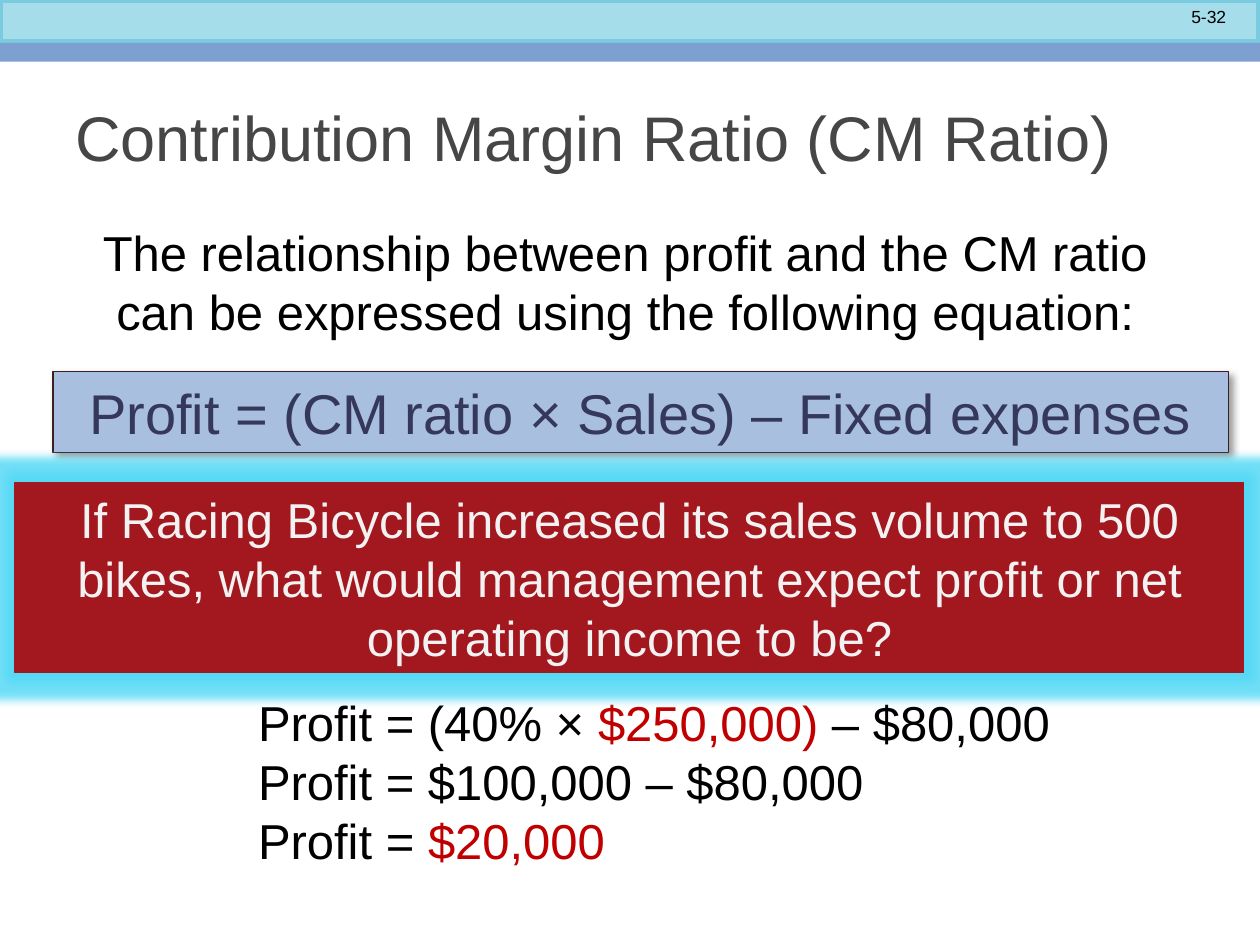
from dataclasses import dataclass

from lxml.etree import SubElement
from pptx import Presentation
from pptx.dml.color import RGBColor
from pptx.enum.shapes import MSO_SHAPE
from pptx.enum.text import MSO_ANCHOR, PP_ALIGN
from pptx.oxml.ns import qn
from pptx.util import Inches, Pt


@dataclass(frozen=True)
class Theme:
    """Colours, font and type sizes of the slide."""
    font: str = "Arial"
    black: str = "000000"
    white: str = "FFFFFF"
    title: str = "464646"
    header: str = "A6DDEA"
    header_line: str = "7ACBE0"
    stripe: str = "7DA0D0"
    equation: str = "A8BFDF"
    equation_line: str = "3E1E25"
    equation_text: str = "35385A"
    question: str = "A3171E"
    question_text: str = "F2F2F2"
    glow: str = "4FD8F5"
    accent: str = "C00000"
    number_size: int = 10
    body_size: int = 28
    equation_size: int = 32
    title_size: int = 36


THEME = Theme()


def add_box(slide, at, fill, line=None, width=0.75):
    """Add a flat rectangle with an optional outline."""
    sp = slide.shapes.add_shape(MSO_SHAPE.RECTANGLE, *map(Inches, at))
    sp.shadow.inherit = False
    sp.fill.solid()
    sp.fill.fore_color.rgb = RGBColor.from_string(fill)
    if line:
        sp.line.color.rgb = RGBColor.from_string(line)
        sp.line.width = Pt(width)
    else:
        sp.line.fill.background()
    return sp


def add_label(slide, at):
    """Add an empty text box."""
    return slide.shapes.add_textbox(*map(Inches, at))


def write(sp, paragraphs, size, align=PP_ALIGN.LEFT, anchor=MSO_ANCHOR.TOP):
    """Fill a shape with paragraphs, each a list of (text, colour) runs."""
    tf = sp.text_frame
    for name, value in {"word_wrap": True, "vertical_anchor": anchor}.items():
        setattr(tf, name, value)
    for i, runs in enumerate(paragraphs):
        p = tf.add_paragraph() if i else tf.paragraphs[0]
        p.alignment = align
        for text, color in runs:
            r = p.add_run()
            r.text = text
            r.font.color.rgb = RGBColor.from_string(color)
            for name, value in {"name": THEME.font, "size": Pt(size)}.items():
                setattr(r.font, name, value)


def add_effect(sp, kind, color, alpha, **attributes):
    """Put a glow or a shadow on a shape."""
    effects = sp._element.spPr.find(qn("a:effectLst"))
    effect = SubElement(effects, qn(f"a:{kind}"))
    for name, value in attributes.items():
        effect.set(name, str(value))
    clr = SubElement(effect, qn("a:srgbClr"), val=color)
    SubElement(clr, qn("a:alpha"), val=str(alpha * 1000))


def add_header(slide):
    """Draw the bands along the top and the slide number."""
    add_box(slide, (0, 0, 10, 0.34), THEME.header, THEME.header_line, 4)
    add_box(slide, (0, 0.34, 10, 0.15), THEME.stripe)
    write(add_label(slide, (8.5, 0, 1.33, 0.27)), [[("5-32", THEME.black)]],
          THEME.number_size, PP_ALIGN.RIGHT)


def add_intro(slide):
    """Write the title and the introducing sentence."""
    write(add_label(slide, (0.5, 0.5, 9, 1.17)),
          [[("Contribution Margin Ratio (CM Ratio)", THEME.title)]],
          THEME.title_size, anchor=MSO_ANCHOR.MIDDLE)
    write(add_label(slide, (0.5, 1.72, 8.92, 1.03)),
          [[("The relationship between profit and the CM ratio can be "
             "expressed using the following equation:", THEME.black)]],
          THEME.body_size, PP_ALIGN.CENTER)


def add_equation(slide):
    """Draw the shadowed profit equation."""
    sp = add_box(slide, (0.42, 2.95, 9.33, 0.64), THEME.equation, THEME.equation_line)
    add_effect(sp, "outerShdw", THEME.black, 40, blurRad=Pt(4), dist=Pt(3),
               dir=45 * 60000, algn="tl", rotWithShape=0)
    write(sp, [[("Profit = (CM ratio × Sales) – Fixed expenses", THEME.equation_text)]],
          THEME.equation_size, PP_ALIGN.CENTER, MSO_ANCHOR.MIDDLE)


def add_answer(slide):
    """Write the worked calculation."""
    sp = add_box(slide, (1.95, 5.45, 6.57, 1.99), THEME.white)
    write(sp, [
        [("Profit = (40% × ", THEME.black), ("$250,000) ", THEME.accent),
         ("– $80,000", THEME.black)],
        [("Profit = $100,000 – $80,000", THEME.black)],
        [("Profit = ", THEME.black), ("$20,000", THEME.accent)],
    ], THEME.body_size)


def add_question(slide):
    """Draw the glowing question panel."""
    sp = add_box(slide, (0.12, 3.83, 9.75, 1.51), THEME.question, THEME.question)
    add_effect(sp, "glow", THEME.glow, 80, rad=Pt(10))
    write(sp, [[("If Racing Bicycle increased its sales volume to 500 bikes, what would "
                 "management expect profit or net operating income to be?",
                 THEME.question_text)]],
          THEME.body_size, PP_ALIGN.CENTER, MSO_ANCHOR.MIDDLE)


def main():
    """Build and save the slide."""
    prs = Presentation()
    for name, value in {"slide_width": 10, "slide_height": 7.5}.items():
        setattr(prs, name, Inches(value))
    slide = prs.slides.add_slide(prs.slide_layouts[6])
    for add_part in (add_header, add_intro, add_equation, add_answer, add_question):
        add_part(slide)
    prs.save("out.pptx")


if __name__ == "__main__":
    main()
